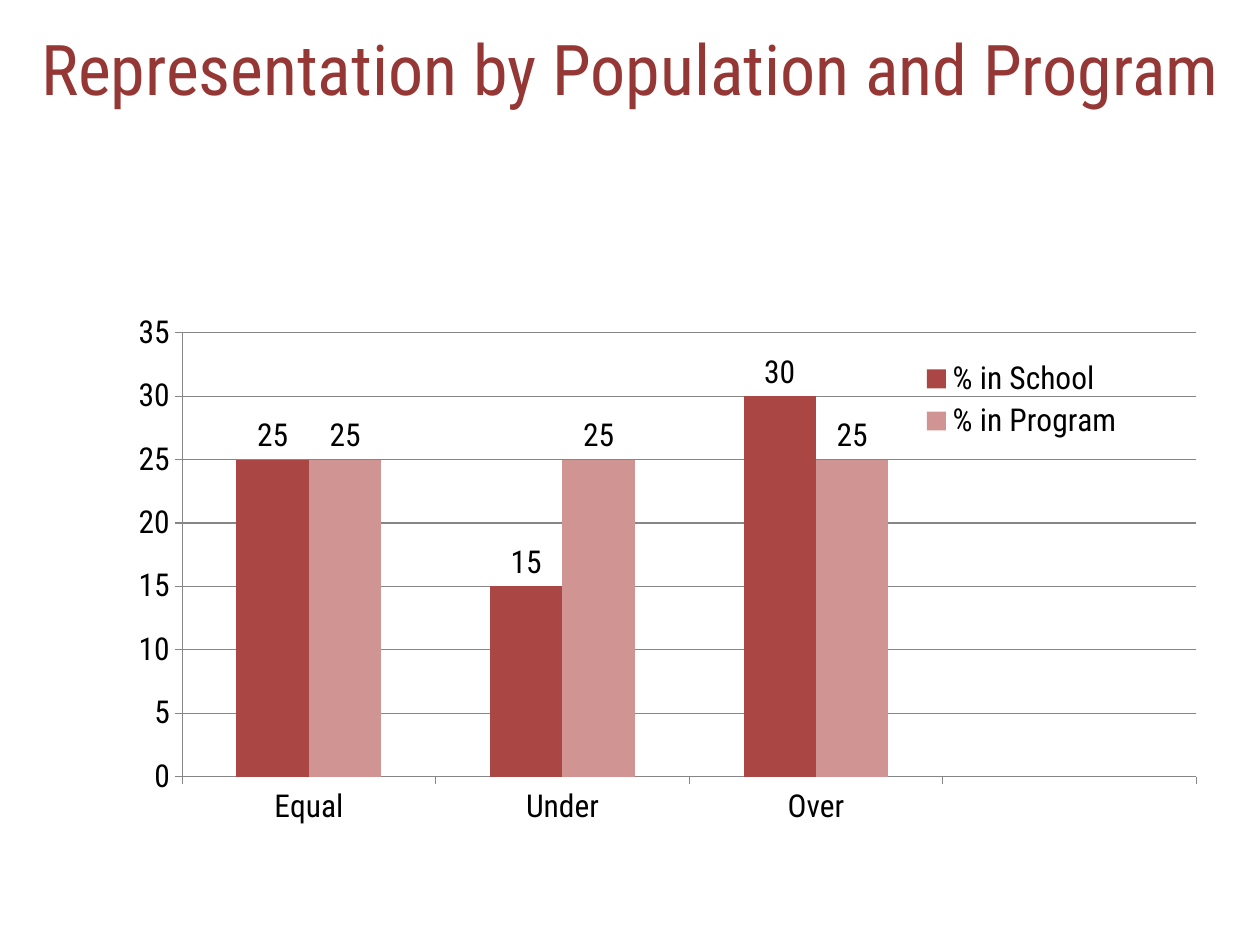
from lxml import etree
from pptx import Presentation
from pptx.chart.data import CategoryChartData
from pptx.dml.color import RGBColor
from pptx.enum.chart import XL_CHART_TYPE, XL_LABEL_POSITION, XL_LEGEND_POSITION, XL_TICK_MARK
from pptx.enum.text import MSO_ANCHOR, PP_ALIGN
from pptx.oxml.ns import qn
from pptx.util import Emu, Pt

COLUMNS = XL_CHART_TYPE.COLUMN_CLUSTERED
OUTSIDE_END = XL_LABEL_POSITION.OUTSIDE_END
LEGEND_RIGHT = XL_LEGEND_POSITION.RIGHT
TICK_OUT, TICK_NONE = XL_TICK_MARK.OUTSIDE, XL_TICK_MARK.NONE
MIDDLE, CENTER = MSO_ANCHOR.MIDDLE, PP_ALIGN.CENTER

FONT = "Roboto Condensed"
TITLE_COLOR, TEXT_COLOR, LINE_COLOR = "953735", "000000", "868686"
# The last category is left empty to make room for the legend
CATEGORIES = ["Equal", "Under", "Over", ""]
SERIES = [
    ("% in School", [25, 15, 30, None], "AA4643"),
    ("% in Program", [25, 25, 25, None], "D09493"),
]


def px(n):
    return Emu(round(n * 914400 / 126))


def rgb(color):
    return RGBColor.from_string(color)


def style_font(font, size, color):
    font.name = FONT
    font.size = Pt(size)
    font.bold = False
    font.color.rgb = rgb(color)


def style_line(line):
    line.color.rgb = rgb(LINE_COLOR)
    line.width = Pt(0.75)


def set_layout(parent, index, box, inner=False):
    """Place a chart part by x, y, width and height as fractions of the chart."""
    for old in parent.findall(qn("c:layout")):
        parent.remove(old)
    layout = etree.Element(qn("c:layout"))
    manual = etree.SubElement(layout, qn("c:manualLayout"))
    settings = [("layoutTarget", "inner")] if inner else []
    settings += [("xMode", "edge"), ("yMode", "edge")]
    settings += zip("xywh", box)
    for tag, value in settings:
        etree.SubElement(manual, qn("c:" + tag)).set("val", str(value))
    parent.insert(index, layout)


def add_title(slide, text):
    sp = slide.shapes.title
    sp.left, sp.top, sp.width, sp.height = px(0), px(0), px(1260), px(136)
    tf = sp.text_frame
    tf.text = text
    tf.word_wrap = True
    tf.vertical_anchor = MIDDLE
    p = tf.paragraphs[0]
    p.alignment = CENTER
    style_font(p.font, 40, TITLE_COLOR)


def style_axes(chart):
    for axis in (chart.category_axis, chart.value_axis):
        axis.major_tick_mark = TICK_OUT
        axis.minor_tick_mark = TICK_NONE
        style_line(axis.format.line)
    axis = chart.value_axis
    axis.minimum_scale, axis.maximum_scale, axis.major_unit = 0, 35, 5
    axis.has_major_gridlines = True
    style_line(axis.major_gridlines.format.line)


def add_column_chart(slide, x, y, w, h):
    data = CategoryChartData()
    data.categories = CATEGORIES
    for name, values, _ in SERIES:
        data.add_series(name, values)
    chart = slide.shapes.add_chart(COLUMNS, px(x), px(y), px(w), px(h), data).chart
    chart.has_title = False
    style_font(chart.font, 18, TEXT_COLOR)
    style_axes(chart)

    plot = chart.plots[0]
    plot.gap_width, plot.overlap = 150, 0
    plot.vary_by_categories = False
    for series, (_, _, color) in zip(plot.series, SERIES):
        series.format.fill.solid()
        series.format.fill.fore_color.rgb = rgb(color)
        series.data_labels.show_value = True
        series.data_labels.position = OUTSIDE_END

    chart.has_legend = True
    chart.legend.position = LEGEND_RIGHT
    chart.legend.include_in_layout = False
    root = chart._chartSpace.find(qn("c:chart"))
    set_layout(root.find(qn("c:plotArea")), 0, (0.129, 0.05, 0.871, 0.794), inner=True)
    set_layout(root.find(qn("c:legend")), 1, (0.76, 0.09, 0.18, 0.16))


def main():
    prs = Presentation()
    prs.slide_width, prs.slide_height = px(1260), px(945)
    slide = prs.slides.add_slide(prs.slide_layouts[5])
    add_title(slide, "Representation by Population and Program")
    add_column_chart(slide, 32, 305, 1165, 559)
    prs.save("out.pptx")


if __name__ == "__main__":
    main()
